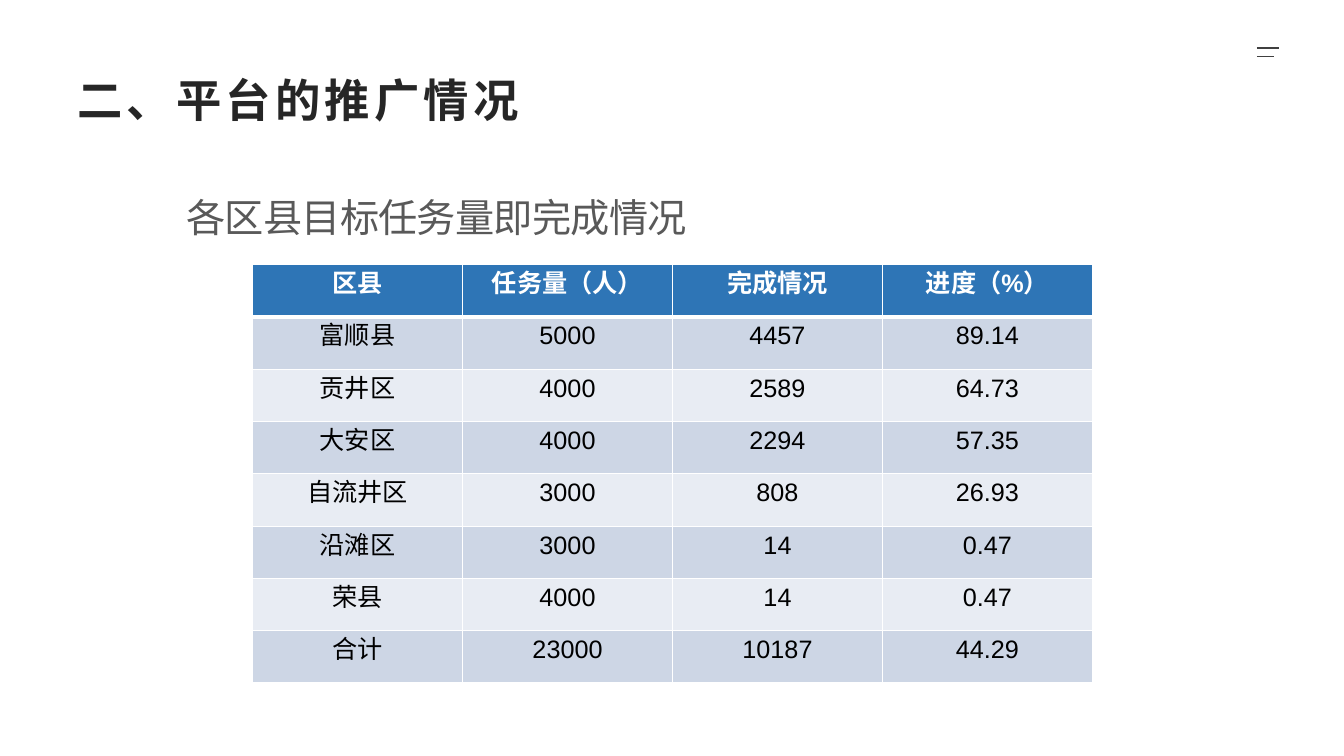
from pptx import Presentation
from pptx.dml.color import RGBColor
from pptx.enum.shapes import MSO_CONNECTOR
from pptx.enum.text import MSO_ANCHOR, PP_ALIGN
from pptx.oxml.ns import qn
from pptx.util import Pt
from lxml import etree

STRAIGHT = MSO_CONNECTOR.STRAIGHT
TOP, MIDDLE = MSO_ANCHOR.TOP, MSO_ANCHOR.MIDDLE
LEFT, CENTER, JUSTIFY = PP_ALIGN.LEFT, PP_ALIGN.CENTER, PP_ALIGN.JUSTIFY
FONT = "Arial"
TITLE_ONLY = 5

DISTRICT_ROWS = [
    ("区县", "任务量（人）", "完成情况", "进度（%）"),
    ("富顺县", "5000", "4457", "89.14"),
    ("贡井区", "4000", "2589", "64.73"),
    ("大安区", "4000", "2294", "57.35"),
    ("自流井区", "3000", "808", "26.93"),
    ("沿滩区", "3000", "14", "0.47"),
    ("荣县", "4000", "14", "0.47"),
    ("合计", "23000", "10187", "44.29"),
]


def color(value):
    return RGBColor.from_string(value)


def style_text(frame, size, ink, align, bold=False, spacing=0):
    para = frame.paragraphs[0]
    para.alignment = align
    for span in para.runs:
        span.font.name = FONT
        span.font.size = Pt(size)
        span.font.bold = bold
        span.font.color.rgb = color(ink)
        properties = span._r.get_or_add_rPr()
        etree.SubElement(properties, qn("a:ea"), typeface=FONT)
        if spacing:
            properties.set("spc", str(round(spacing * 100)))


def place_title(page, left, top, width, height):
    title = page.shapes.title
    title.left, title.top = Pt(left), Pt(top)
    title.width, title.height = Pt(width), Pt(height)
    frame = title.text_frame
    frame.text = "二、平台的推广情况"
    frame.vertical_anchor = TOP
    style_text(frame, 32.4, "262626", LEFT, True, 3)


def add_menu_mark(page, left, top, width, gap):
    for index, length in enumerate((width, width * 0.77)):
        y = Pt(top + index * gap)
        line = page.shapes.add_connector(STRAIGHT, Pt(left), y, Pt(left + length), y)
        line.line.color.rgb = color("404040")
        line.line.width = Pt(1)
        etree.SubElement(line._element.spPr, qn("a:effectLst"))


def add_subtitle(page, left, top, width, height):
    box = page.shapes.add_textbox(Pt(left), Pt(top), Pt(width), Pt(height))
    frame = box.text_frame
    frame.word_wrap = True
    frame.vertical_anchor = MIDDLE
    frame.text = "各区县目标任务量即完成情况"
    para = frame.paragraphs[0]
    para.line_spacing = 1.5
    para.space_after = Pt(8)
    style_text(frame, 28, "595959", JUSTIFY, spacing=-0.5)


def set_borders(cell, widths):
    properties = cell._tc.get_or_add_tcPr()
    for index, (side, width) in enumerate(widths.items()):
        border = etree.Element(qn("a:ln" + side), w=str(Pt(width)))
        fill = etree.SubElement(border, qn("a:solidFill"))
        etree.SubElement(fill, qn("a:srgbClr"), val="FFFFFF")
        properties.insert(index, border)


def add_district_table(page, left, top, width, height):
    row_count, column_count = len(DISTRICT_ROWS), len(DISTRICT_ROWS[0])
    table = page.shapes.add_table(
        row_count, column_count, Pt(left), Pt(top), Pt(width), Pt(height)
    ).table
    for column in table.columns:
        column.width = Pt(width / column_count)
    for row_index, values in enumerate(DISTRICT_ROWS):
        table.rows[row_index].height = Pt(height / row_count)
        header = row_index == 0
        band = "2E75B6" if header else ("E8ECF3", "CDD6E5")[row_index % 2]
        top_width = 3 if row_index == 1 else 1
        bottom_width = 3 if header else 1
        for column_index, value in enumerate(values):
            cell = table.cell(row_index, column_index)
            cell.text_frame.text = value
            style_text(cell.text_frame, 18, "FFFFFF" if header else "000000", CENTER, header)
            cell.fill.solid()
            cell.fill.fore_color.rgb = color(band)
            set_borders(cell, {"L": 1, "R": 1, "T": top_width, "B": bottom_width})


def build_promotion_page(deck):
    page = deck.slides.add_slide(deck.slide_layouts[TITLE_ONLY])
    place_title(page, 48, 48, 864, 50)
    add_menu_mark(page, 897.8, 34.4, 15.8, 5.8)
    add_subtitle(page, 126, 124, 431, 44.5)
    add_district_table(page, 180.4, 189, 600, 299)


def main():
    deck = Presentation()
    deck.slide_width, deck.slide_height = Pt(960), Pt(540)
    build_promotion_page(deck)
    deck.save("out.pptx")


if __name__ == "__main__":
    main()
